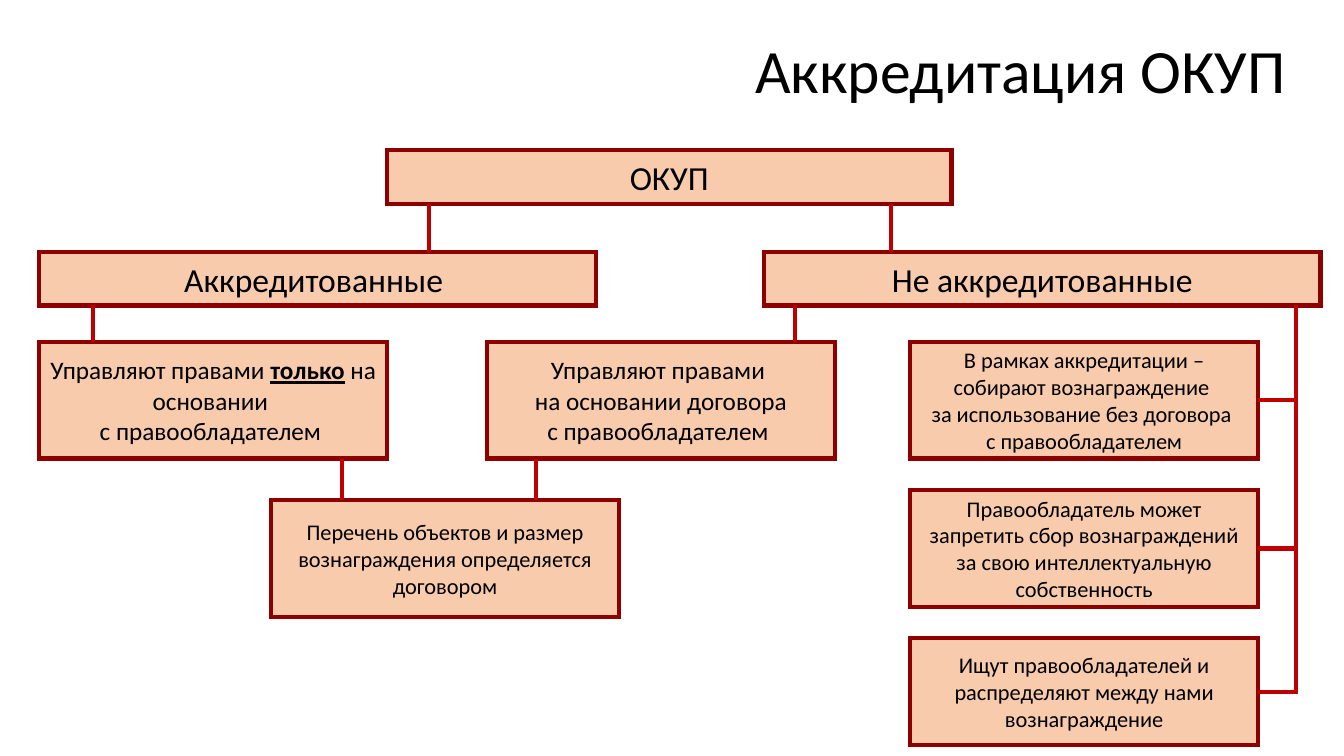
from dataclasses import dataclass

from lxml import etree
from pptx import Presentation
from pptx.dml.color import RGBColor
from pptx.enum.shapes import MSO_CONNECTOR, MSO_SHAPE
from pptx.enum.text import MSO_ANCHOR, MSO_AUTO_SIZE, PP_ALIGN
from pptx.oxml.ns import qn
from pptx.util import Pt

STRAIGHT = MSO_CONNECTOR.STRAIGHT
RECTANGLE = MSO_SHAPE.RECTANGLE
MIDDLE = MSO_ANCHOR.MIDDLE
NO_AUTOFIT = MSO_AUTO_SIZE.NONE
CENTER = PP_ALIGN.CENTER
RIGHT = PP_ALIGN.RIGHT
RIGHT_SIDE = 3
TITLE_ONLY = 5


@dataclass(frozen=True)
class Theme:
    font: str = "Calibri"
    text: RGBColor = RGBColor(0x00, 0x00, 0x00)
    fill: RGBColor = RGBColor(0xF8, 0xCB, 0xAD)
    border: RGBColor = RGBColor(0x8E, 0x00, 0x00)
    link: RGBColor = RGBColor(0xC0, 0x00, 0x00)
    stroke: float = 3
    title: int = 44
    heading: int = 24
    body: int = 18
    detail: int = 16


def add_text(paragraph, text, *, theme, size, bold=False, underline=False):
    run = paragraph.add_run()
    run.text = text
    run.font.name = theme.font
    run.font.size = Pt(size)
    run.font.bold = bold
    run.font.underline = underline
    run.font.color.rgb = theme.text


class Diagram:
    def __init__(self, slide, theme):
        self.slide = slide
        self.theme = theme

    def title(self, text, left, top, width, height):
        heading = self.slide.shapes.title
        heading.left, heading.top = Pt(left), Pt(top)
        heading.width, heading.height = Pt(width), Pt(height)
        frame = heading.text_frame
        frame.word_wrap = True
        frame.auto_size = NO_AUTOFIT
        frame.vertical_anchor = MIDDLE
        paragraph = frame.paragraphs[0]
        paragraph.alignment = RIGHT
        paragraph.line_spacing = 0.9
        add_text(paragraph, text, theme=self.theme, size=self.theme.title)

    def box(self, lines, left, top, width, height, size):
        box = self.slide.shapes.add_shape(
            RECTANGLE, Pt(left), Pt(top), Pt(width), Pt(height))
        box.shadow.inherit = False
        box.fill.solid()
        box.fill.fore_color.rgb = self.theme.fill
        box.line.color.rgb = self.theme.border
        box.line.width = Pt(self.theme.stroke)
        outline = box._element.spPr.find(qn("a:ln"))
        etree.SubElement(outline, qn("a:miter"), lim="800000")
        frame = box.text_frame
        frame.word_wrap = True
        frame.vertical_anchor = MIDDLE
        for index, line in enumerate(lines):
            paragraph = frame.add_paragraph() if index else frame.paragraphs[0]
            paragraph.alignment = CENTER
            for text, emphasis in line:
                add_text(paragraph, text, theme=self.theme, size=size,
                         bold=emphasis, underline=emphasis)
        return box

    def line(self, x1, y1, x2, y2):
        line = self.slide.shapes.add_connector(
            STRAIGHT, Pt(x1), Pt(y1), Pt(x2), Pt(y2))
        line.line.color.rgb = self.theme.link
        line.line.width = Pt(self.theme.stroke)
        etree.SubElement(line._element.spPr, qn("a:effectLst"))
        return line

    def drop(self, upper, lower, x):
        self.line(x, upper.top.pt + upper.height.pt, x, lower.top.pt)

    def branch(self, box, spine_x):
        y = box.top.pt + box.height.pt / 2
        line = self.line(box.left.pt + box.width.pt, y, spine_x, y)
        line.begin_connect(box, RIGHT_SIDE)
        return y


def plain(*lines):
    return [[(line, False)] for line in lines]


def main():
    theme = Theme()
    presentation = Presentation()
    presentation.slide_width = Pt(960)
    presentation.slide_height = Pt(540)
    slide = presentation.slides.add_slide(presentation.slide_layouts[TITLE_ONLY])
    diagram = Diagram(slide, theme)
    diagram.title("Аккредитация ОКУП", 98, 0, 828, 104.4)

    heading_height = 38.2
    group_top, group_width = 180, 397.4
    card_top, card_width, card_height = 244.1, 248.4, 83.5
    left_x, middle_x, right_x = 28.1, 347.8, 650.2
    card_pitch = 105.9
    spine_x = 925.9

    root = diagram.box(plain("ОКУП"), 276.5, 107.3, 403.2, heading_height, theme.heading)
    accredited = diagram.box(plain("Аккредитованные "), left_x, group_top,
                             group_width, heading_height, theme.heading)
    unaccredited = diagram.box(plain("Не аккредитованные"), 545.8, group_top,
                               group_width, heading_height, theme.heading)

    only_basis = diagram.box(
        [[("Управляют правами ", False), ("только", True), (" на основании ", False)],
         [("с правообладателем ", False)]],
        left_x, card_top, card_width, card_height, theme.body)
    contract_basis = diagram.box(
        plain("Управляют правами ", "на основании договора", "с правообладателем "),
        middle_x, card_top, card_width, card_height, theme.body)
    contract_terms = diagram.box(
        plain("Перечень объектов и размер вознаграждения определяется договором"),
        193.7, 357.1, card_width, card_height, theme.detail)

    duties = [
        (plain("В рамках аккредитации – собирают вознаграждение ",
               "за использование без договора ", "с правообладателем"), card_height),
        (plain("Правообладатель может запретить сбор вознаграждений "
               "за свою интеллектуальную собственность"), card_height),
        (plain("Ищут правообладателей и распределяют между нами вознаграждение"), 76.3),
    ]
    for row, (lines, height) in enumerate(duties):
        duty = diagram.box(lines, right_x, card_top + row * card_pitch,
                           card_width, height, theme.detail)
        spine_end = diagram.branch(duty, spine_x)
    diagram.line(spine_x, group_top + heading_height,
                 spine_x, spine_end + theme.stroke / 2)

    for upper, lower, x in [
        (root, accredited, 306.7),
        (root, unaccredited, 636.5),
        (accredited, only_basis, 66.2),
        (unaccredited, contract_basis, 568.1),
        (only_basis, contract_terms, 244.1),
        (contract_basis, contract_terms, 383),
    ]:
        diagram.drop(upper, lower, x)

    presentation.save("out.pptx")


if __name__ == "__main__":
    main()
